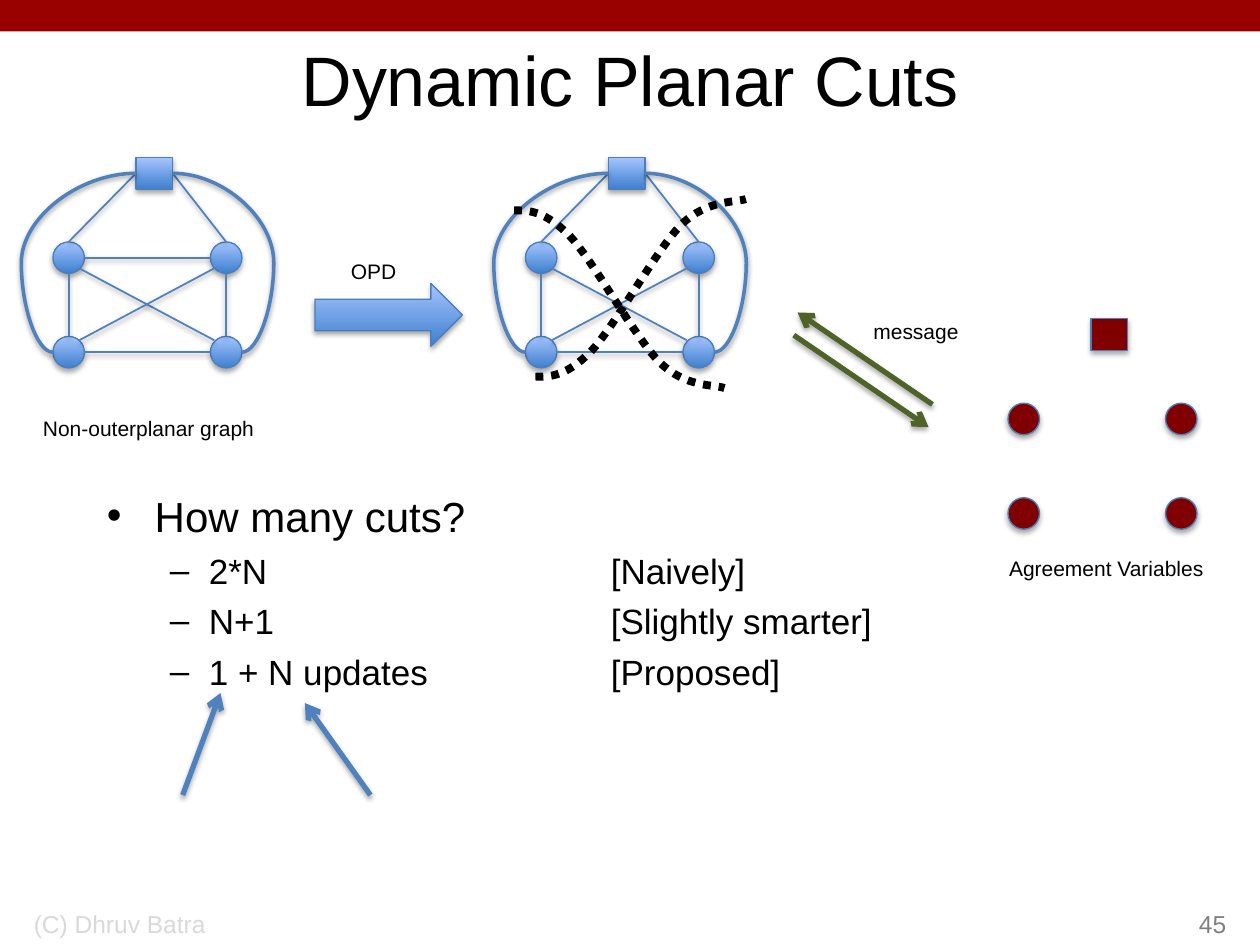
from lxml import etree
from pptx import Presentation
from pptx.dml.color import RGBColor
from pptx.enum.dml import MSO_LINE
from pptx.enum.shapes import MSO_CONNECTOR as CONN, MSO_SHAPE as SHAPE
from pptx.enum.text import MSO_ANCHOR as ANCHOR, PP_ALIGN as ALIGN
from pptx.oxml.ns import qn
from pptx.util import Emu, Inches, Pt

BLUE, EDGE, GREEN, MAROON = "4F81BD", "4B7EBC", "4F6228", "800000"
GRADIENT = ("3F80CE", "A4C4FF")
NODE, SQUARE_W = 0.25, 0.29
NODE_XS, NODE_YS = (0.25, 1.5), (0.67, 1.42)
SQUARE_X = 0.91


def rgb(value):
    return RGBColor.from_string(value)


def add_xml(parent, tag, **attrs):
    return etree.SubElement(parent, qn(tag), attrs)


def add_shadow(effects, alpha=35, dist=1.8):
    outer = add_xml(effects, "a:outerShdw", blurRad=str(Pt(3.1)), dist=str(Pt(dist)),
                    dir="5400000", rotWithShape="0")
    color = add_xml(outer, "a:srgbClr", val="000000")
    add_xml(color, "a:alpha", val=str(alpha * 1000))


def add_shape(s, kind, x, y, w, h, fill=None, line=EDGE):
    sp = s.shapes.add_shape(kind, Inches(x), Inches(y), Inches(w), Inches(h))
    sp.shadow.inherit = False
    if fill:
        sp.fill.solid()
        sp.fill.fore_color.rgb = rgb(fill)
    else:
        sp.fill.gradient()
        sp.fill.gradient_angle = 90
        for stop, color in zip(sp.fill.gradient_stops, GRADIENT):
            stop.color.rgb = rgb(color)
    if line:
        sp.line.color.rgb = rgb(line)
        sp.line.width = Pt(0.75)
        add_shadow(sp._element.spPr.find(qn("a:effectLst")))
    else:
        sp.line.fill.background()
    return sp


def add_line(s, start, end, color=BLUE, width=1, arrow=False, bend=None):
    kind = CONN.CURVE if bend else CONN.STRAIGHT
    c = s.shapes.add_connector(kind, *map(Inches, (*start, *end)))
    c.line.color.rgb = rgb(color)
    c.line.width = Pt(width)
    sp_pr = c._element.spPr
    if bend:
        guides = sp_pr.find(qn("a:prstGeom")).find(qn("a:avLst"))
        add_xml(guides, "a:gd", name="adj1", fmla=f"val {round(bend * 100000)}")
    if arrow:
        add_xml(sp_pr.find(qn("a:ln")), "a:tailEnd", type="arrow")
    effects = add_xml(sp_pr, "a:effectLst")
    if arrow:
        add_shadow(effects)
    else:
        add_shadow(effects, 38, 1.6)


def write(p, text, size=12, color="000000", align=None, before=0):
    p.alignment = align
    p.space_before = Pt(before)
    r = p.add_run()
    r.text = text
    r.font.name = "Arial"
    r.font.size = Pt(size)
    r.font.color.rgb = rgb(color)


def add_text(s, text, x, y, w, h, wrap=True, anchor=ANCHOR.TOP, **style):
    box = s.shapes.add_textbox(Inches(x), Inches(y), Inches(w), Inches(h))
    tf = box.text_frame
    tf.word_wrap = wrap
    tf.vertical_anchor = anchor
    write(tf.paragraphs[0], text, **style)


def add_label(s, text, x, y, w):
    add_text(s, text, x, y, w, 0.3, wrap=False, align=ALIGN.CENTER)


def add_nodes(s, x, y, fill=None):
    for dy in NODE_YS:
        for dx in NODE_XS:
            add_shape(s, SHAPE.OVAL, x + dx, y + dy, NODE, NODE, fill)


def add_square(s, x, y, fill=None):
    add_shape(s, SHAPE.RECTANGLE, x + SQUARE_X, y, SQUARE_W, NODE, fill)


def add_graph(s, x, y, top_edge):
    add_nodes(s, x, y)
    half = NODE / 2
    left, right = NODE_XS
    top, bottom = NODE_YS
    mid_l, mid_r = left + half, right + half
    sq_l, sq_r = SQUARE_X, SQUARE_X + SQUARE_W
    edges = [
        ((left + NODE, bottom + half), (right, bottom + half)),
        ((0.46, 0.88), (1.53, 1.45)),
        ((1.53, 0.88), (0.46, 1.45)),
        ((mid_l, top + NODE), (mid_l, bottom)),
        ((mid_r, top + NODE), (mid_r, bottom)),
        ((sq_l, half), (mid_l, top)),
        ((sq_r, half), (mid_r, top)),
    ]
    if top_edge:
        edges.append(((left + NODE, top + half), (right, top + half)))
    loops = [
        ((sq_r, half), (right + NODE, bottom + half), 1.46),
        ((sq_l, half), (left, bottom + half), 1.38),
    ]
    for (x1, y1), (x2, y2) in edges:
        add_line(s, (x + x1, y + y1), (x + x2, y + y2))
    add_square(s, x, y)
    for (x1, y1), (x2, y2), bend in loops:
        add_line(s, (x + x1, y + y1), (x + x2, y + y2), width=2, bend=bend)


def bezier(points, t):
    weights = ((1 - t) ** 3, 3 * t * (1 - t) ** 2, 3 * t * t * (1 - t), t ** 3)
    return tuple(sum(w * pt[i] for w, pt in zip(weights, points)) for i in (0, 1))


def add_cut(s, x, y, flip=False):
    controls = [(0, 0), (0.12, 0), (0.24, 0), (0.44, 0.2), (0.63, 0.4),
                (0.96, 1.01), (1.16, 1.21), (1.37, 1.41), (1.59, 1.38), (1.67, 1.41)]
    steps = 16
    curve = [controls[0]] + [bezier(controls[i:i + 4], k / steps)
                             for i in (0, 3, 6) for k in range(1, steps + 1)]
    points = [(Inches(x + dx), Inches(y + (1.41 - dy if flip else dy))) for dx, dy in curve]
    builder = s.shapes.build_freeform(*points[0], scale=1.0)
    builder.add_line_segments(points[1:], close=False)
    sp = builder.convert_to_shape()
    sp.shadow.inherit = False
    sp.fill.background()
    sp.line.color.rgb = rgb("000000")
    sp.line.width = Pt(4.5)
    sp.line.dash_style = MSO_LINE.ROUND_DOT


def add_bullets(s, x, y, w, h):
    items = [("•", "How many cuts?", 24, 0.38, 0.38),
             ("–", "2*N\t[Naively]", 20, 0.81, 0.31),
             ("–", "N+1\t[Slightly smarter]", 20, 0.81, 0.31),
             ("–", "1 + N updates\t[Proposed]", 20, 0.81, 0.31)]
    tf = s.shapes.add_textbox(Inches(x), Inches(y), Inches(w), Inches(h)).text_frame
    tf.word_wrap = True
    for i, (bullet, text, size, margin, hang) in enumerate(items):
        p = tf.add_paragraph() if i else tf.paragraphs[0]
        p_pr = p._p.get_or_add_pPr()
        p_pr.set("marL", str(Inches(margin)))
        p_pr.set("indent", str(-Inches(hang)))
        add_xml(p_pr, "a:buFont", typeface="Arial")
        add_xml(p_pr, "a:buChar", char=bullet)
        if "\t" in text:
            tabs = add_xml(p_pr, "a:tabLst")
            add_xml(tabs, "a:tab", pos=str(Inches(4)), algn="l")
        write(p, text, size=size, before=5 if i else 0)


def add_title(s, x, y, w, h):
    title = s.shapes.title
    title.left, title.top, title.width, title.height = map(Inches, (x, y, w, h))
    title.text_frame.vertical_anchor = ANCHOR.MIDDLE
    write(title.text_frame.paragraphs[0], "Dynamic Planar Cuts", size=40, align=ALIGN.CENTER)


def add_footer(s, y, h):
    add_text(s, "(C) Dhruv Batra", 0.17, y, 3.17, h, anchor=ANCHOR.BOTTOM,
             size=14, color="D9D9D9")
    add_text(s, "45", 7.75, y, 2.08, h, anchor=ANCHOR.BOTTOM,
             size=14, color="808080", align=ALIGN.RIGHT)


def main():
    prs = Presentation()
    prs.slide_width, prs.slide_height = Inches(10), Inches(7.5)
    s = prs.slides.add_slide(prs.slide_layouts[5])
    add_shape(s, SHAPE.RECTANGLE, 0, 0, 10, 0.25, "990000", line=None)
    add_title(s, 0.75, 0.25, 8.5, 0.75)
    add_bullets(s, 0.75, 3.84, 8.5, 1.75)
    add_footer(s, 7, 0.5)
    add_graph(s, 0.17, 1.25, top_edge=True)
    add_label(s, "Non-outerplanar graph", 0.23, 3.25, 1.9)
    add_shape(s, SHAPE.RIGHT_ARROW, 2.5, 2.25, 1.17, 0.5)
    add_label(s, "OPD", 2.68, 2, 0.57)
    add_graph(s, 3.92, 1.25, top_edge=False)
    add_cut(s, 4.08, 1.67)
    add_cut(s, 4.25, 1.58, flip=True)
    add_nodes(s, 7.75, 2.53, MAROON)
    add_square(s, 7.75, 2.53, MAROON)
    add_label(s, "Agreement Variables", 7.89, 4.36, 1.78)
    add_label(s, "message", 6.83, 2.48, 0.88)
    for start, end, color in (((2.94, 6.31), (2.42, 5.58), BLUE),
                              ((1.45, 6.31), (1.75, 5.5), BLUE),
                              ((6.3, 2.66), (7.37, 3.39), GREEN),
                              ((7.4, 3.21), (6.33, 2.48), GREEN)):
        add_line(s, start, end, color, width=3, arrow=True)
    prs.save("out.pptx")


if __name__ == "__main__":
    main()
